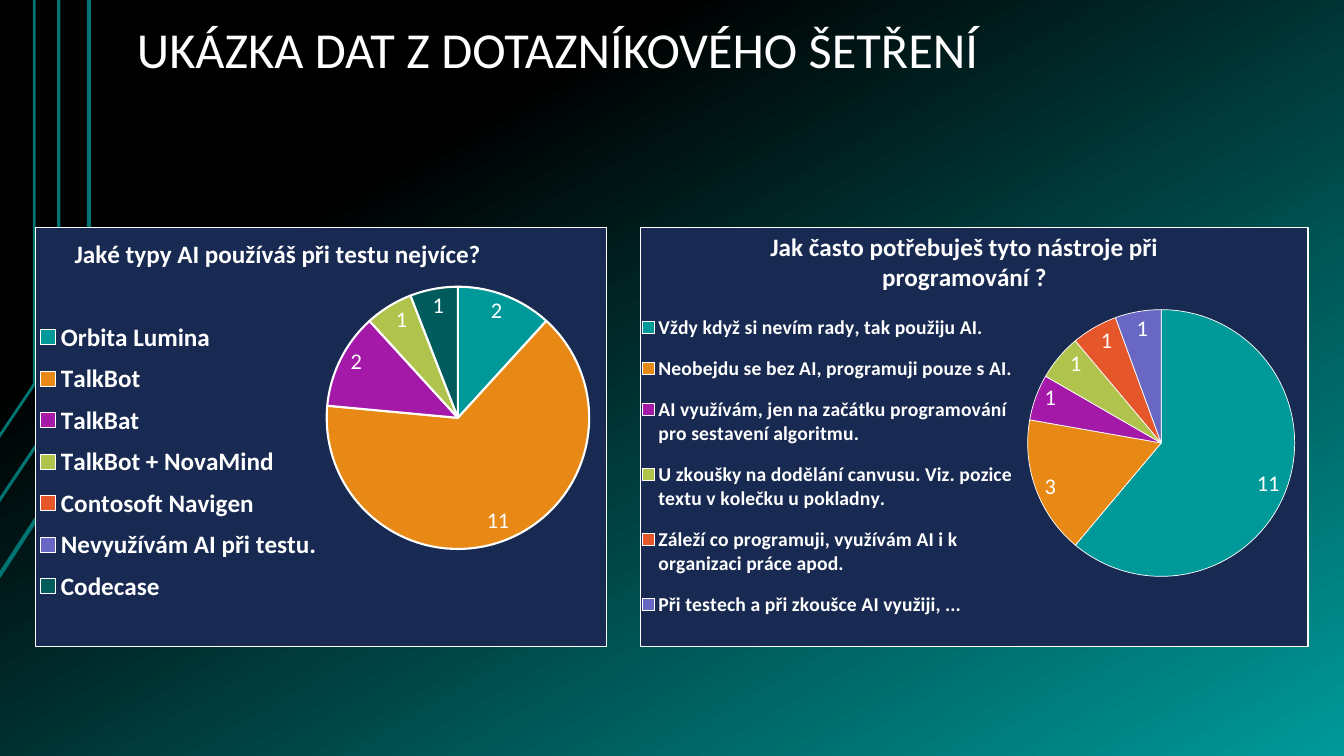
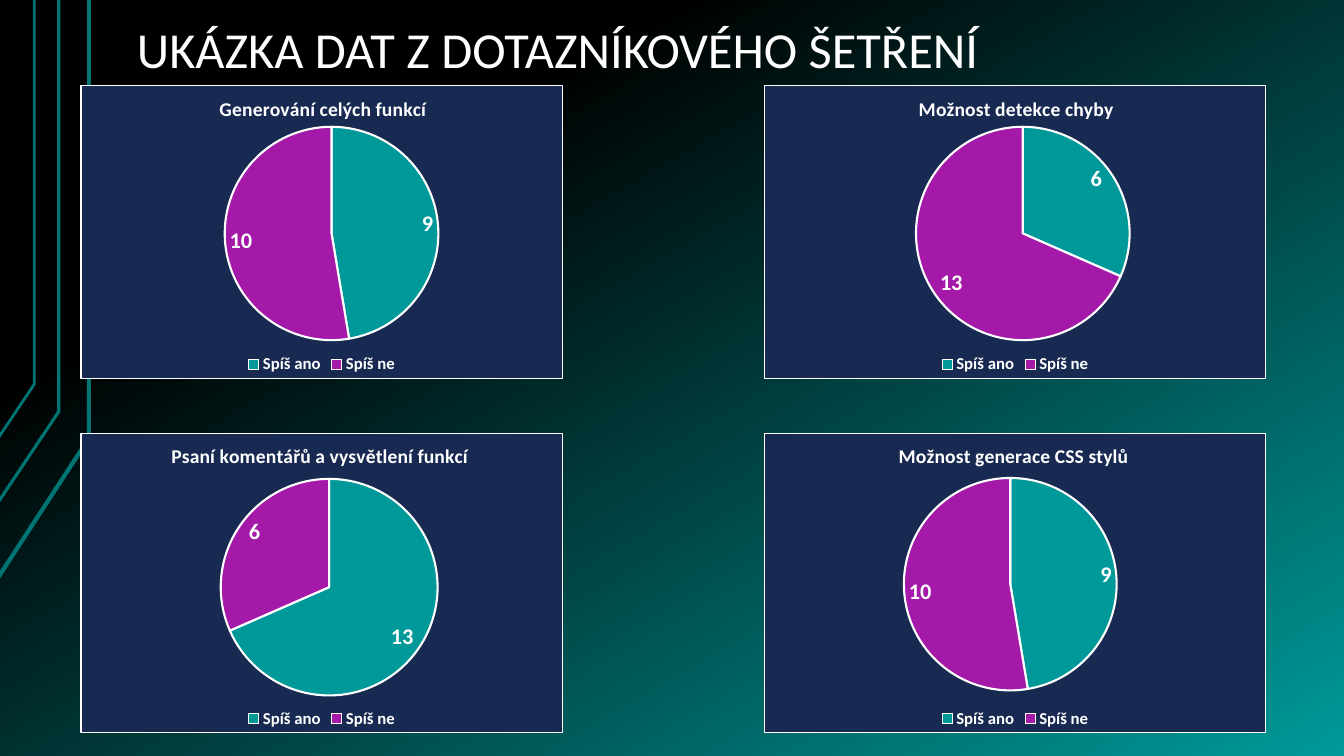
from dataclasses import dataclass

from lxml import etree
from pptx import Presentation
from pptx.chart.data import CategoryChartData
from pptx.dml.color import RGBColor
from pptx.enum import chart as charts, text
from pptx.oxml import ns, parse_xml
from pptx.util import Pt

FONT = "Calibri"
BLACK = RGBColor(0x00, 0x00, 0x00)
WHITE = RGBColor(0xFF, 0xFF, 0xFF)
NAVY = RGBColor(0x19, 0x2A, 0x52)
LINE_TEAL = RGBColor(0x00, 0x73, 0x73)
TEAL = RGBColor(0x00, 0x99, 0x99)
ORANGE = RGBColor(0xE9, 0x89, 0x15)
PURPLE = RGBColor(0xA4, 0x19, 0xA7)
LIME = RGBColor(0xAF, 0xC3, 0x4D)
RED = RGBColor(0xE5, 0x57, 0x2B)
VIOLET = RGBColor(0x68, 0x68, 0xC4)
DARK_TEAL = RGBColor(0x00, 0x5C, 0x5C)
SLICES = [TEAL, ORANGE, PURPLE, LIME, RED, VIOLET, DARK_TEAL]

SLIDE_TITLE = "UKÁZKA DAT Z DOTAZNÍKOVÉHO ŠETŘENÍ"
SIDE_LINES = [
    (3, [(-1, 412), (63.5, 313), (63.5, 0)]),
    (2.25, [(-1.5, 359), (42, 294), (42, 0)]),
    (2, [(-1, 312.5), (24.5, 274.5), (24.5, 0)]),
]

TOOLS = ["Orbita Lumina", "TalkBot", "TalkBat", "TalkBot + NovaMind",
         "Contosoft Navigen", "Nevyužívám AI při testu.", "Codecase"]
HABITS = [
    "Vždy když si nevím rady, tak použiju AI.",
    "Neobejdu se bez AI, programuji pouze s AI.",
    "AI využívám, jen na začátku programování pro sestavení algoritmu.",
    "U zkoušky na dodělání canvusu. Viz. pozice textu v kolečku u pokladny.",
    "Záleží co programuji, využívám AI i k organizaci práce apod.",
    "Při testech a při zkoušce AI využiji, ...",
]
ANSWERS = ["Spíš ano", "Spíš ne"]


@dataclass
class Pie:
    title: list
    title_at: tuple
    box: tuple
    plot: tuple
    values: list
    categories: list
    colors: list
    title_size: float = 14
    legend_size: float = 12
    legend: tuple = ()
    outline: float = 1.5
    bold_labels: bool = True


def style_font(font, size, bold=False):
    font.name = FONT
    font.size = Pt(size)
    font.bold = bold
    font.color.rgb = WHITE


def set_layout(parent, predecessor, place, inner=False):
    for old in parent.findall(ns.qn("c:layout")):
        parent.remove(old)
    layout = etree.Element(ns.qn("c:layout"))
    manual = etree.SubElement(layout, ns.qn("c:manualLayout"))
    settings = [("layoutTarget", "inner")] if inner else []
    settings += [("xMode", "edge"), ("yMode", "edge")]
    settings += zip("xywh", place)
    for name, value in settings:
        etree.SubElement(manual, ns.qn(f"c:{name}")).set("val", str(value))
    if predecessor:
        parent.find(ns.qn(predecessor)).addnext(layout)
    else:
        parent.insert(0, layout)


def frame_chart(chart):
    body = chart.element.find(ns.qn("c:chart"))
    if chart.element.find(ns.qn("c:roundedCorners")) is None:
        body.addprevious(parse_xml(
            f'<c:roundedCorners {ns.nsdecls("c")} val="0"/>'))
    body.addnext(parse_xml(
        f'<c:spPr {ns.nsdecls("c", "a")}>'
        f'<a:solidFill><a:srgbClr val="{NAVY}"/></a:solidFill>'
        f'<a:ln w="{Pt(0.75)}"><a:solidFill><a:srgbClr val="{WHITE}"/>'
        '</a:solidFill></a:ln></c:spPr>'))
    return body


def add_chart_title(chart, pie):
    chart.has_title = True
    frame = chart.chart_title.text_frame
    for index, line in enumerate(pie.title):
        paragraph = frame.add_paragraph() if index else frame.paragraphs[0]
        run = paragraph.add_run()
        run.text = line
        style_font(run.font, pie.title_size, True)


def add_pie(slide, pie):
    data = CategoryChartData()
    data.categories = pie.categories
    data.add_series("Series 1", pie.values)
    chart = slide.shapes.add_chart(
        charts.XL_CHART_TYPE.PIE, *map(Pt, pie.box), data).chart
    style_font(chart.font, 10)
    add_chart_title(chart, pie)

    chart.has_legend = True
    chart.legend.position = charts.XL_LEGEND_POSITION.BOTTOM
    chart.legend.include_in_layout = False
    style_font(chart.legend.font, pie.legend_size, True)

    plot = chart.plots[0]
    plot.vary_by_categories = True
    plot.has_data_labels = True
    labels = plot.data_labels
    labels.show_value = True
    labels.show_percentage = False
    labels.position = charts.XL_LABEL_POSITION.BEST_FIT
    style_font(labels.font, 16, pie.bold_labels)
    for index, color in enumerate(pie.colors):
        slice_format = plot.series[0].points[index].format
        slice_format.fill.solid()
        slice_format.fill.fore_color.rgb = color
        slice_format.line.color.rgb = WHITE
        slice_format.line.width = Pt(pie.outline)

    body = frame_chart(chart)
    set_layout(body.find(ns.qn("c:title")), "c:tx", pie.title_at)
    set_layout(body.find(ns.qn("c:plotArea")), None, pie.plot, inner=True)
    if pie.legend:
        set_layout(body.find(ns.qn("c:legend")), "c:legendPos", pie.legend)


def paint_background(master):
    fill = master.background.fill
    fill.gradient()
    fill.gradient_angle = 300
    for stop, color, position in zip(
            fill.gradient_stops, (BLACK, TEAL), (0.25, 1)):
        stop.color.rgb = color
        stop.position = position


def add_side_line(slide, width, points):
    start, *others = [(Pt(x), Pt(y)) for x, y in points]
    builder = slide.shapes.build_freeform(*start)
    builder.add_line_segments(others, close=False)
    shape = builder.convert_to_shape()
    shape.shadow.inherit = False
    shape.fill.background()
    shape.line.color.rgb = LINE_TEAL
    shape.line.width = Pt(width)


def add_slide_title(slide):
    shape = slide.shapes.add_textbox(Pt(88.5), Pt(9.5), Pt(816), Pt(52))
    frame = shape.text_frame
    frame.word_wrap = True
    frame.vertical_anchor = text.MSO_ANCHOR.BOTTOM
    frame.margin_left = frame.margin_right = Pt(9.36)
    frame.margin_top = frame.margin_bottom = Pt(5.04)
    paragraph = frame.paragraphs[0]
    paragraph.line_spacing = 0.9
    run = paragraph.add_run()
    run.text = SLIDE_TITLE
    style_font(run.font, 36)


def add_survey_slide(presentation, pies):
    slide = presentation.slides.add_slide(presentation.slide_layouts[6])
    for width, points in SIDE_LINES:
        add_side_line(slide, width, points)
    add_slide_title(slide)
    for pie in pies:
        add_pie(slide, pie)


def answer_pie(title, title_x, box, plot, values):
    return Pie([title], (title_x, 0.02), box, plot, values,
               ANSWERS, [TEAL, PURPLE])


def main():
    presentation = Presentation()
    presentation.slide_width = Pt(960)
    presentation.slide_height = Pt(540)
    paint_background(presentation.slide_master)

    add_survey_slide(presentation, [
        Pie(["Jaké typy AI používáš při testu nejvíce?"], (0.06, 0.01),
            (25.2, 162, 408.3, 300), (0.51, 0.14, 0.46, 0.63),
            [2, 11, 2, 1, None, None, 1], TOOLS, SLICES,
            title_size=18, legend_size=18, legend=(0, 0.2, 0.5, 0.72),
            bold_labels=False),
        Pie(["Jak často potřebuješ tyto nástroje při", "programování ?"],
            (0.19, 0), (457.2, 162, 477.5, 300), (0.58, 0.19, 0.4, 0.65),
            [11, 3, 1, 1, 1, 1], HABITS, SLICES[:6],
            title_size=18, legend_size=14, legend=(0, 0.17, 0.56, 0.8),
            outline=0.5, bold_labels=False),
    ])

    left, right, top, bottom = 57.5, 546, 61, 309
    left_width, right_width, top_height, bottom_height = 345, 358.5, 209.5, 214.5
    add_survey_slide(presentation, [
        answer_pie("Generování celých funkcí", 0.28,
                   (left, top, left_width, top_height),
                   (0.29, 0.14, 0.46, 0.73), [9, 10]),
        answer_pie("Možnost detekce chyby", 0.3,
                   (right, top, right_width, top_height),
                   (0.29, 0.14, 0.45, 0.73), [6, 13]),
        answer_pie("Možnost generace CSS stylů", 0.26,
                   (right, bottom, right_width, bottom_height),
                   (0.27, 0.15, 0.44, 0.71), [9, 10]),
        answer_pie("Psaní komentářů a vysvětlení funkcí", 0.18,
                   (left, bottom, left_width, bottom_height),
                   (0.29, 0.15, 0.45, 0.73), [13, 6]),
    ])
    presentation.save("out.pptx")


if __name__ == "__main__":
    main()
